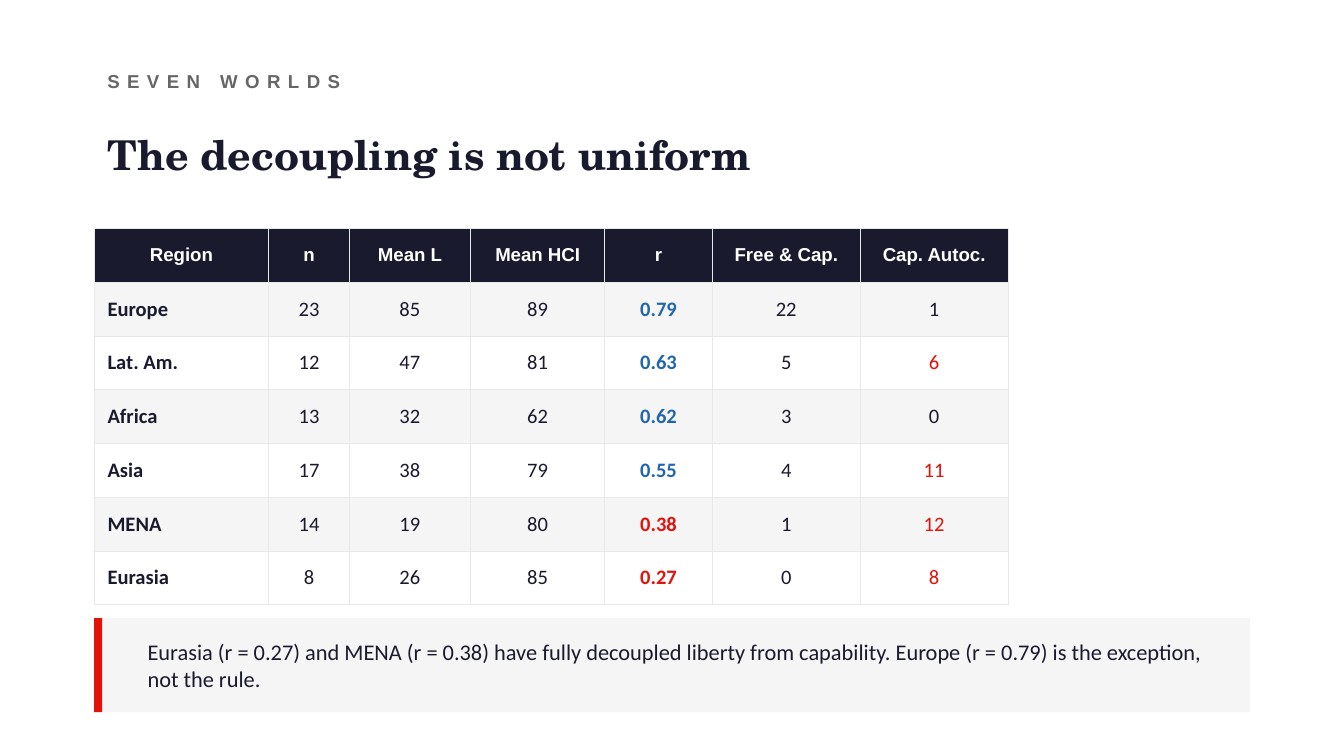
import lxml.etree
import pptx
import pptx.dml.color
import pptx.enum.shapes
import pptx.enum.text
import pptx.oxml.ns
import pptx.util

Inches = pptx.util.Inches
RGBColor = pptx.dml.color.RGBColor
ALIGN = pptx.enum.text.PP_ALIGN
MIDDLE = pptx.enum.text.MSO_ANCHOR.MIDDLE

NAVY = RGBColor(0x1A, 0x1A, 0x2E)
GRAY = RGBColor(0x66, 0x66, 0x66)
PALE = RGBColor(0xF5, 0xF5, 0xF5)
RULE = RGBColor(0xE8, 0xE8, 0xE8)
WHITE = RGBColor(0xFF, 0xFF, 0xFF)
BLUE = RGBColor(0x21, 0x66, 0xAC)
RED = RGBColor(0xE3, 0x12, 0x0B)

COLUMN_WIDTHS = [1.3, 0.6, 0.9, 1, 0.8, 1.1, 1.1]
ROW_HEIGHT = 0.4
R_COLUMN, AUTOCRACY_COLUMN = 4, 6
HEADER = ["Region", "n", "Mean L", "Mean HCI", "r", "Free & Cap.", "Cap. Autoc."]
REGIONS = [
    ["Europe", "23", "85", "89", "0.79", "22", "1"],
    ["Lat. Am.", "12", "47", "81", "0.63", "5", "6"],
    ["Africa", "13", "32", "62", "0.62", "3", "0"],
    ["Asia", "17", "38", "79", "0.55", "4", "11"],
    ["MENA", "14", "19", "80", "0.38", "1", "12"],
    ["Eurasia", "8", "26", "85", "0.27", "0", "8"],
]


def write(frame, text, size, font, color, bold=False, align=ALIGN.LEFT):
    frame.text = text
    frame.word_wrap = True
    para = frame.paragraphs[0]
    para.alignment = align
    span = para.runs[0]
    span.font.size = pptx.util.Pt(size)
    span.font.name = font
    span.font.color.rgb = color
    span.font.bold = bold
    return span


def add_text(page, left, top, width, height, *style):
    box = page.shapes.add_textbox(Inches(left), Inches(top), Inches(width), Inches(height))
    box.text_frame.vertical_anchor = MIDDLE
    return write(box.text_frame, *style)


def add_block(page, left, top, width, height, color):
    block = page.shapes.add_shape(pptx.enum.shapes.MSO_SHAPE.RECTANGLE, Inches(left),
                                  Inches(top), Inches(width), Inches(height))
    block.shadow.inherit = False
    block.fill.solid()
    block.fill.fore_color.rgb = color
    block.line.fill.background()


def add_heading(page, left, top, width):
    # Section label
    label = add_text(page, left, top, width, 0.4, "SEVEN WORLDS", 10, "Arial", GRAY, True)
    label.font._element.set("spc", "400")
    # Title
    title = page.shapes.title
    title.left, title.top = Inches(left), Inches(top + 0.5)
    title.width, title.height = Inches(width), Inches(0.5)
    title.text_frame.auto_size = pptx.enum.text.MSO_AUTO_SIZE.NONE
    title.text_frame.vertical_anchor = MIDDLE
    write(title.text_frame, "The decoupling is not uniform", 22, "TeX Gyre Schola", NAVY, True)


def add_borders(cell):
    properties = cell._tc.get_or_add_tcPr()
    for side in ("a:lnL", "a:lnR", "a:lnT", "a:lnB"):
        line = lxml.etree.SubElement(properties, pptx.oxml.ns.qn(side), w="6350")
        fill = lxml.etree.SubElement(line, pptx.oxml.ns.qn("a:solidFill"))
        lxml.etree.SubElement(fill, pptx.oxml.ns.qn("a:srgbClr"), val=str(RULE))


def value_color(column, text):
    if column == R_COLUMN:
        return BLUE if float(text) >= 0.5 else RED
    if column == AUTOCRACY_COLUMN and int(text) > 5:
        return RED
    return NAVY


def add_region_table(page, left, top):
    rows = [HEADER] + REGIONS
    table = page.shapes.add_table(
        len(rows), len(HEADER), Inches(left), Inches(top),
        Inches(sum(COLUMN_WIDTHS)), Inches(ROW_HEIGHT * len(rows))).table
    table.first_row = table.horz_banding = False
    for column, width in zip(table.columns, COLUMN_WIDTHS):
        column.width = Inches(width)
    for row_index, values in enumerate(rows):
        table.rows[row_index].height = Inches(ROW_HEIGHT)
        for column, text in enumerate(values):
            cell = table.cell(row_index, column)
            cell.vertical_anchor = MIDDLE
            add_borders(cell)
            cell.fill.solid()
            if row_index == 0:
                cell.fill.fore_color.rgb = NAVY
                write(cell.text_frame, text, 10, "Arial", WHITE, True, ALIGN.CENTER)
            else:
                cell.fill.fore_color.rgb = PALE if row_index % 2 else WHITE
                write(cell.text_frame, text, 11, "Calibri", value_color(column, text),
                      column in (0, R_COLUMN), ALIGN.CENTER if column else ALIGN.LEFT)


def add_callout(page, left, top, width, height):
    add_block(page, left, top, width, height, PALE)
    add_block(page, left, top, 0.06, height, RED)
    add_text(page, left + 0.3, top, width - 0.3, height,
             "Eurasia (r = 0.27) and MENA (r = 0.38) have fully decoupled liberty from "
             "capability. Europe (r = 0.79) is the exception, not the rule.",
             12, "Calibri", NAVY)


def main():
    deck = pptx.Presentation()
    # Widescreen 16:9 page
    deck.slide_width = Inches(10)
    deck.slide_height = Inches(10 * 9 / 16)
    page = deck.slides.add_slide(deck.slide_layouts.get_by_name("Title Only"))
    page.background.fill.solid()
    page.background.fill.fore_color.rgb = WHITE
    add_heading(page, 0.7, 0.4, 8)
    add_region_table(page, 0.7, 1.7)
    add_callout(page, 0.7, 4.6, 8.6, 0.7)
    deck.save("out.pptx")


if __name__ == "__main__":
    main()
